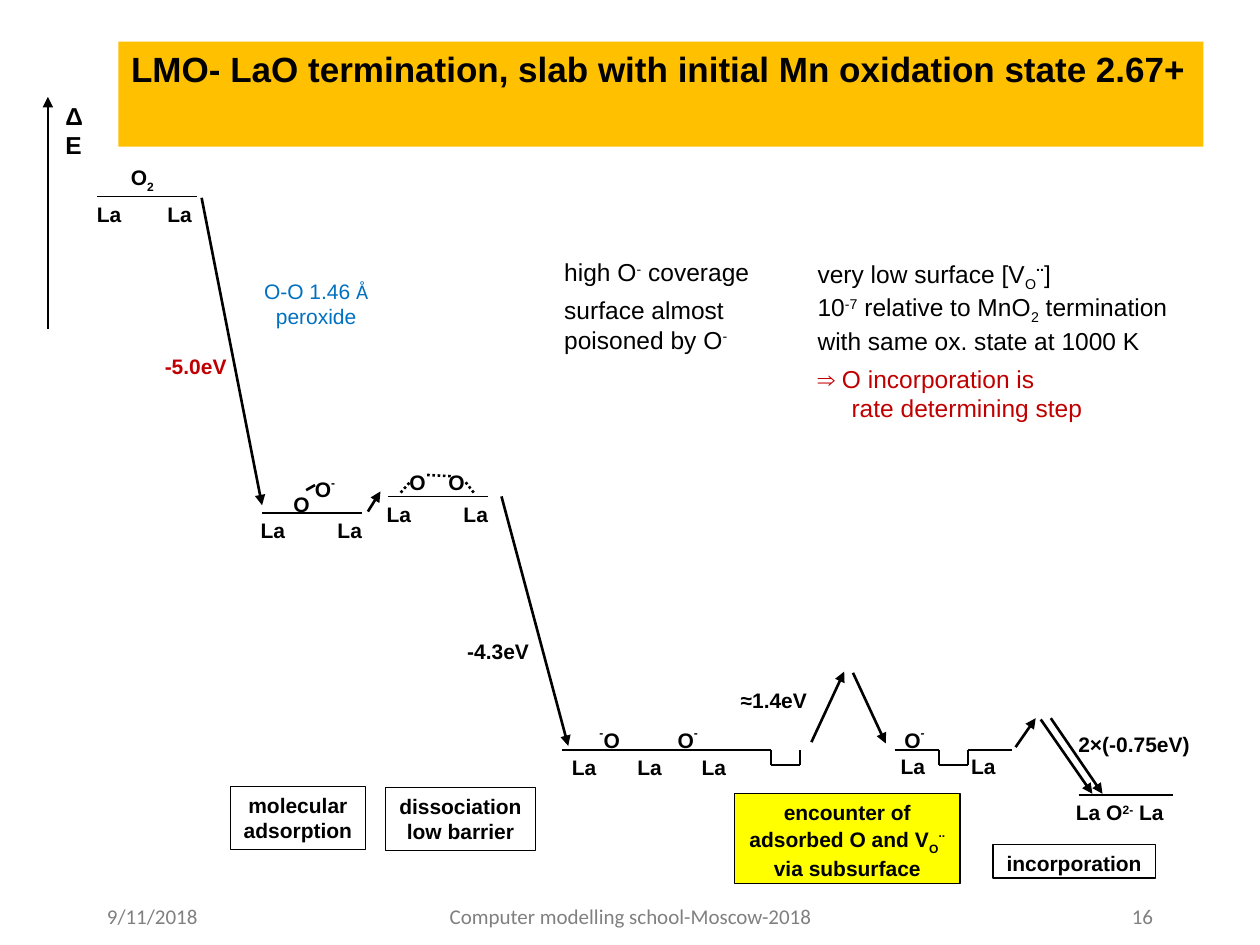
from dataclasses import dataclass
from itertools import pairwise
from typing import NamedTuple

from lxml import etree
from pptx import Presentation
from pptx.dml.color import RGBColor
from pptx.enum.dml import MSO_LINE
from pptx.enum.shapes import MSO_CONNECTOR, MSO_SHAPE
from pptx.enum.text import MSO_ANCHOR, MSO_AUTO_SIZE, PP_ALIGN
from pptx.oxml.ns import qn
from pptx.util import Inches, Pt

LEFT, CENTER, RIGHT = PP_ALIGN.LEFT, PP_ALIGN.CENTER, PP_ALIGN.RIGHT
STRAIGHT, RECT = MSO_CONNECTOR.STRAIGHT, MSO_SHAPE.RECTANGLE
GROW, TOP, DOTS = MSO_AUTO_SIZE.SHAPE_TO_FIT_TEXT, MSO_ANCHOR.TOP, MSO_LINE.ROUND_DOT
BLACK, RED, BLUE, GRAY = "000000", "C00000", "0070C0", "808080"
YELLOW, ORANGE = "FFFF00", "FFC000"


class Run(NamedTuple):
    text: str
    base: int = 0
    font: str | None = None
    bold: bool | None = None


@dataclass
class Para:
    runs: tuple
    before: float = 0
    indent: float = 0
    tabs: tuple = ()
    color: str | None = None


class Label(NamedTuple):
    x: float
    y: float
    w: float
    h: float
    paras: tuple
    fmt: dict


class Line(NamedTuple):
    points: tuple
    width: float = 1
    arrow: bool = False
    dash: MSO_LINE | None = None


def rgb(color: str) -> RGBColor:
    return RGBColor.from_string(color)


def para(*runs, **kw) -> Para:
    return Para(tuple(Run(r) if isinstance(r, str) else r for r in runs), **kw)


def label(x: float, y: float, w: float, h: float, *paras, **fmt) -> Label:
    return Label(x, y, w, h, tuple(para(p) if isinstance(p, str) else p for p in paras), fmt)


def arrow(x1: float, y1: float, x2: float, y2: float) -> Line:
    return Line(((x1, y1), (x2, y2)), 1.5, True)


def bond(x1: float, y1: float, x2: float, y2: float, dash: MSO_LINE | None = DOTS) -> Line:
    return Line(((x1, y1), (x2, y2)), 1.5, dash=dash)


def write_text(tf, paras, size=12, font="Arial", color=BLACK, bold=True, align=LEFT, wrap=False) -> None:
    tf.word_wrap = wrap
    tf.auto_size = GROW
    tf.vertical_anchor = TOP
    for i, item in enumerate(paras):
        p = tf.paragraphs[0] if i == 0 else tf.add_paragraph()
        p.alignment = align
        p.space_before = Pt(item.before)
        pPr = p._p.get_or_add_pPr()
        if item.indent:
            pPr.set("marL", str(Inches(item.indent)))
        if item.tabs:
            tab_list = etree.SubElement(pPr, qn("a:tabLst"))
            for pos in item.tabs:
                etree.SubElement(tab_list, qn("a:tab"), pos=str(Inches(pos)), algn="l")
        for run in item.runs:
            r = p.add_run()
            r.text = run.text
            r.font.size = Pt(size)
            r.font.name = run.font or font
            r.font.bold = bold if run.bold is None else run.bold
            r.font.color.rgb = rgb(item.color or color)
            if run.base:
                r._r.get_or_add_rPr().set("baseline", str(run.base * 1000))


def add_label(slide, item: Label) -> None:
    box = [Inches(v) for v in item[:4]]
    write_text(slide.shapes.add_textbox(*box).text_frame, item.paras, **item.fmt)


def add_step(slide, item: Label, fill: str | None = None) -> None:
    sp = slide.shapes.add_shape(RECT, *[Inches(v) for v in item[:4]])
    sp.shadow.inherit = False
    if fill:
        sp.fill.solid()
        sp.fill.fore_color.rgb = rgb(fill)
    else:
        sp.fill.background()
    sp.line.color.rgb = rgb(BLACK)
    sp.line.width = Pt(0.75)
    write_text(sp.text_frame, item.paras, align=CENTER, **item.fmt)


def add_line(slide, item: Line) -> None:
    for start, end in pairwise(item.points):
        sp = slide.shapes.add_connector(STRAIGHT, *[Inches(v) for v in start + end])
        sp.line.color.rgb = rgb(BLACK)
        sp.line.width = Pt(item.width)
        if item.dash:
            sp.line.dash_style = item.dash
        if item.arrow:
            etree.SubElement(sp.line._get_or_add_ln(), qn("a:tailEnd"), type="triangle")
        etree.SubElement(sp._element.spPr, qn("a:effectLst"))


def add_title(slide, text: str) -> None:
    sp = slide.shapes.title
    sp.left, sp.top, sp.width, sp.height = [Inches(v) for v in (0.94, 0.33, 8.61, 0.44)]
    sp.fill.solid()
    sp.fill.fore_color.rgb = rgb(ORANGE)
    write_text(sp.text_frame, (para(text),), size=20, wrap=True)


MINUS, SUP_MINUS = Run("-", 50), Run("-", 30)
SUB_O, DOUBLE_DOT = Run("O", -25), Run("..", 50, bold=True)
PAIR_NEAR = para("La\tLa", tabs=(0.56,))
PAIR_FAR = para("La\tLa", tabs=(0.61,))

LINES = (
    Line(((0.77, 1.56), (1.56, 1.56))),
    Line(((2.08, 4.07), (2.87, 4.07))),
    Line(((3.08, 3.94), (3.87, 3.94))),
    Line(((4.46, 5.95), (6.12, 5.95), (6.12, 6.07), (6.35, 6.07), (6.35, 5.95))),
    Line(((7.1, 5.95), (7.45, 5.95), (7.45, 6.07), (7.68, 6.07), (7.68, 5.95), (8.03, 5.95))),
    Line(((8.56, 6.31), (9.31, 6.31))),
    bond(2.5, 3.85, 2.43, 3.89, None),
    bond(3.39, 3.77, 3.59, 3.78),
    bond(3.18, 3.91, 3.25, 3.83),
    bond(3.76, 3.91, 3.69, 3.82),
    arrow(0.38, 2.61, 0.38, 0.77),
    arrow(1.6, 1.57, 2.08, 4.01),
    arrow(2.92, 4.06, 3.02, 3.9),
    arrow(3.98, 3.94, 4.51, 5.92),
    arrow(6.44, 5.89, 6.7, 5.33),
    arrow(6.77, 5.34, 7.03, 5.9),
    arrow(8.06, 5.93, 8.22, 5.7),
    arrow(8.26, 5.71, 8.67, 6.3),
    arrow(8.34, 5.7, 8.75, 6.3),
)

LABELS = (
    label(0.42, 0.75, 0.42, 0.57, "ΔE", size=14, wrap=True),
    label(0.94, 1.26, 0.39, 0.3, para("O", Run("2", -25))),
    label(0.67, 1.55, 1.07, 0.3, PAIR_NEAR, wrap=True),
    label(1.97, 4.06, 1.12, 0.3, PAIR_FAR, wrap=True),
    label(2.4, 3.72, 0.37, 0.3, para("O", MINUS)),
    label(2.23, 3.85, 0.33, 0.3, "O"),
    label(2.97, 3.93, 1.12, 0.3, PAIR_FAR, wrap=True),
    label(3.15, 3.68, 0.75, 0.3, para("O\tO", tabs=(0.31,)), wrap=True),
    label(4.44, 5.94, 1.6, 0.3, para("La\tLa\tLa", tabs=(0.52, 1.03)), wrap=True),
    label(4.66, 5.71, 1.1, 0.3, para(MINUS, "O\tO", MINUS, tabs=(0.62,)), wrap=True),
    label(7.08, 5.71, 0.37, 0.3, para("O", MINUS)),
    label(7.05, 5.93, 1.07, 0.3, PAIR_NEAR, wrap=True),
    label(8.44, 6.3, 0.92, 0.3, para("La O", Run("2-", 30), " La")),
    label(1.21, 2.76, 0.7, 0.3, "-5.0eV", color=RED),
    label(3.61, 5.02, 0.7, 0.3, "-4.3eV"),
    label(5.78, 5.41, 0.73, 0.3, "≈1.4eV"),
    label(8.46, 5.76, 1.09, 0.3, "2×(-0.75eV)"),
    label(1.88, 2.16, 1.26, 0.5, para("O-O 1.46 ", Run("Å", font="Calibri")), "peroxide",
          color=BLUE, bold=False, align=CENTER, wrap=True),
    label(4.38, 1.99, 1.74, 0.88, para("high O", SUP_MINUS, " coverage"),
          para("surface almost", before=5), para("poisoned by O", SUP_MINUS), size=14, bold=False),
    label(6.39, 1.99, 3.01, 1.35, para("very low surface [V", SUB_O, DOUBLE_DOT, "]"),
          para("10", Run("-7", 30), " relative to MnO", Run("2", -25), " termination"),
          "with same ox. state at 1000 K", para("⇒ O incorporation is", before=5, color=RED),
          para("rate determining step", indent=0.27, color=RED), size=14, bold=False),
)

FOOTERS = ((0.75, 2.08, "9/11/2018", LEFT),
           (3.42, 3.17, "Computer modelling school-Moscow-2018", CENTER),
           (7.17, 2.08, "16", RIGHT))

STEPS = (label(1.83, 6.24, 1.07, 0.5, "molecular", "adsorption"),
         label(3.06, 6.25, 1.19, 0.5, "dissociation", "low barrier"),
         label(7.88, 6.7, 1.29, 0.27, "incorporation"))
ENCOUNTER = label(5.83, 6.3, 1.79, 0.71, "encounter of",
                  para("adsorbed O and V", SUB_O, DOUBLE_DOT), "via subsurface", wrap=True)


def main() -> None:
    prs = Presentation()
    prs.slide_width, prs.slide_height = Inches(10), Inches(7.5)
    slide = prs.slides.add_slide(prs.slide_layouts[5])
    add_title(slide, "LMO- LaO termination, slab with initial Mn oxidation state 2.67+")
    for item in LINES:
        add_line(slide, item)
    for step in STEPS:
        add_step(slide, step)
    add_step(slide, ENCOUNTER, YELLOW)
    for item in LABELS:
        add_label(slide, item)
    for x, w, text, align in FOOTERS:
        add_label(slide, label(x, 7.12, w, 0.3, text, font="Calibri", color=GRAY,
                               bold=False, align=align, wrap=True))
    prs.save("out.pptx")


if __name__ == "__main__":
    main()
